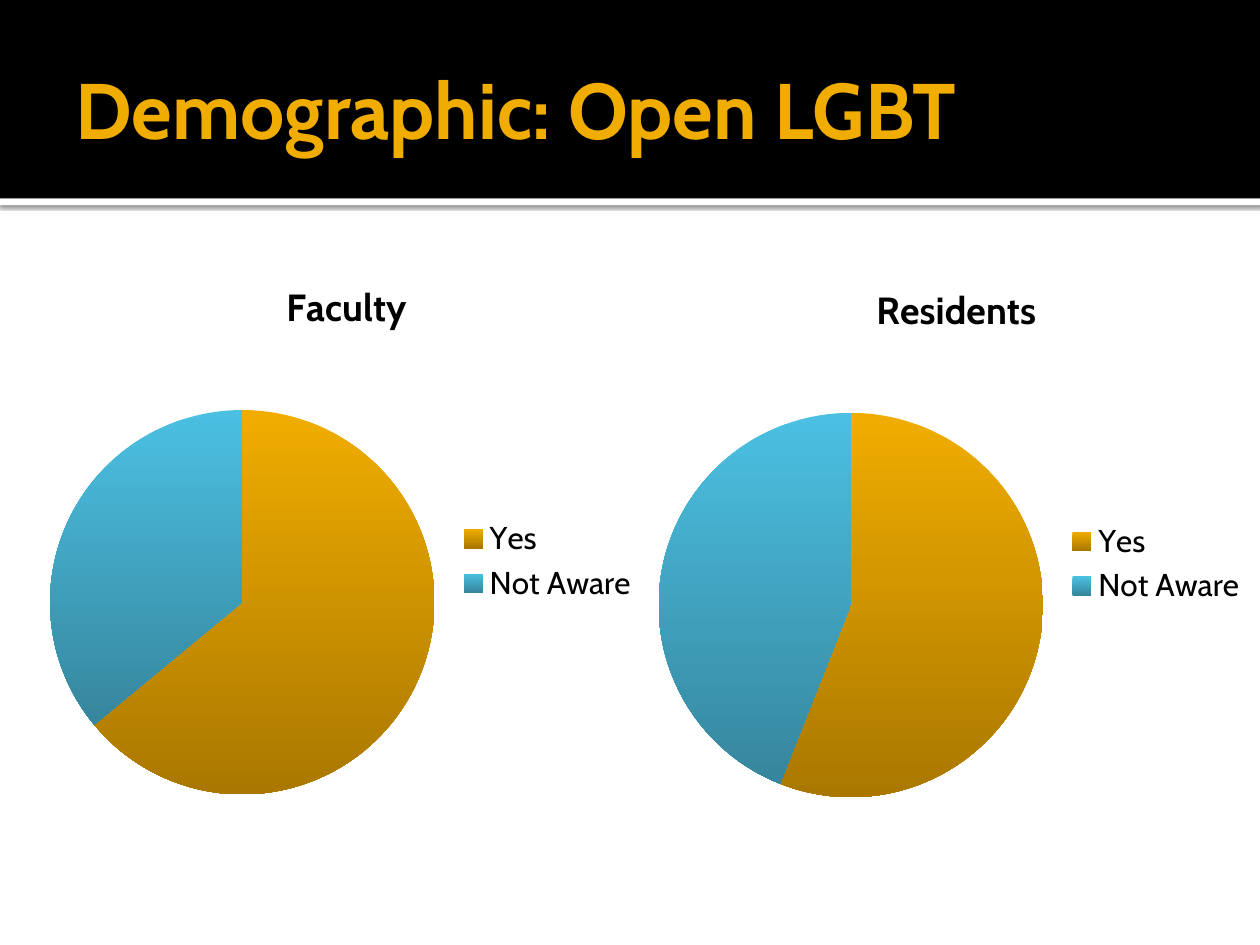
from pptx import Presentation
from pptx.chart.data import CategoryChartData
from pptx.dml.color import RGBColor
from pptx.enum.chart import XL_CHART_TYPE, XL_LEGEND_POSITION
from pptx.enum.shapes import MSO_SHAPE
from pptx.enum.text import MSO_ANCHOR
from pptx.oxml import parse_xml
from pptx.oxml.ns import nsdecls, qn
from pptx.util import Inches, Pt

BLACK = RGBColor(0x00, 0x00, 0x00)
WHITE = RGBColor(0xFF, 0xFF, 0xFF)
GOLD = RGBColor(0xF0, 0xAD, 0x00)
DARK_GOLD = RGBColor(0xAA, 0x78, 0x00)
BLUE = RGBColor(0x4B, 0xC0, 0xE2)
DARK_BLUE = RGBColor(0x36, 0x86, 0x9D)
SLICE_COLORS = ((GOLD, DARK_GOLD), (BLUE, DARK_BLUE))
CATEGORIES = ("Yes", "Not Aware")


class Deck:
    """Holds the style and the current slide; lengths are shares of the slide."""

    font = "Cabin"

    def __init__(self):
        self.prs = Presentation()
        self.prs.slide_width, self.prs.slide_height = Inches(10), Inches(7.5)
        self.s = self.prs.slides.add_slide(self.prs.slide_layouts[6])

    def box(self, x, y, w, h):
        width, height = self.prs.slide_width, self.prs.slide_height
        return int(x * width), int(y * height), int(w * width), int(h * height)

    def style(self, font, size, color, bold=False):
        font.name, font.size, font.bold = self.font, Pt(size), bold
        font.color.rgb = color

    def band(self, y, h, color, shadow=False):
        sp = self.s.shapes.add_shape(MSO_SHAPE.RECTANGLE, *self.box(0, y, 1, h))
        sp.fill.solid()
        sp.fill.fore_color.rgb = color
        sp.line.fill.background()
        sp.shadow.inherit = False
        if shadow:
            sp._element.spPr.find(qn("a:effectLst")).append(parse_xml(
                f'<a:outerShdw {nsdecls("a")} blurRad="{Pt(2.5)}" dist="{Pt(0.8)}" '
                'dir="5400000" algn="tl" rotWithShape="0"><a:srgbClr val="000000">'
                '<a:alpha val="60000"/></a:srgbClr></a:outerShdw>'))

    def title(self, text, *place):
        tf = self.s.shapes.add_textbox(*self.box(*place)).text_frame
        tf.word_wrap = True
        tf.vertical_anchor = MSO_ANCHOR.MIDDLE
        tf.margin_left = Inches(0.1)
        tf.margin_right = tf.margin_top = tf.margin_bottom = Inches(0.05)
        p = tf.paragraphs[0]
        p.text = text
        self.style(p.font, 45, GOLD, bold=True)

    def layout(self, parent, index, target="", **shares):
        for old in parent.findall(qn("c:layout")):
            parent.remove(old)
        inner = f'<c:layoutTarget val="{target}"/>' if target else ""
        modes = "".join(f'<c:{k}Mode val="edge"/>' for k in "xy")
        values = "".join(f'<c:{k} val="{v}"/>' for k, v in shares.items())
        parent.insert(index, parse_xml(
            f'<c:layout {nsdecls("c")}><c:manualLayout>{inner}{modes}{values}'
            '</c:manualLayout></c:layout>'))

    def pie(self, name, values, title_x, *place):
        data = CategoryChartData()
        data.categories = CATEGORIES
        data.add_series(name, values)
        chart = self.s.shapes.add_chart(XL_CHART_TYPE.PIE, *self.box(*place), data).chart
        self.style(chart.font, 18, BLACK)
        chart.has_title = True
        p = chart.chart_title.text_frame.paragraphs[0]
        p.text = name
        self.style(p.font, 21.6, BLACK, bold=True)
        self.layout(chart.chart_title._element, 1, x=title_x, y=0.05)
        chart.has_legend = True
        chart.legend.position = XL_LEGEND_POSITION.RIGHT
        chart.legend.include_in_layout = False
        self.style(chart.legend.font, 18, BLACK)
        plot = chart.plots[0]
        plot.vary_by_categories = True
        self.layout(chart._chartSpace.chart.plotArea, 0, "inner",
                    x=0.03, y=0.26, w=0.62, h=0.61)
        for i, colors in enumerate(SLICE_COLORS):
            fill = plot.series[0].points[i].format.fill
            fill.gradient()
            fill.gradient_angle = 270
            for stop, color in zip(fill.gradient_stops, colors):
                stop.color.rgb = color


def main():
    deck = Deck()
    deck.band(0.21, 0.007, WHITE, shadow=True)
    deck.band(0, 0.21, BLACK)
    deck.title("Demographic: Open LGBT", 0.05, 0.023, 0.9, 0.183)
    deck.pie("Faculty", (64, 36), 0.4, 0.025, 0.256, 0.492, 0.675)
    deck.pie("Residents", (56, 44), 0.37, 0.508, 0.259, 0.492, 0.675)
    deck.prs.save("out.pptx")


if __name__ == "__main__":
    main()
